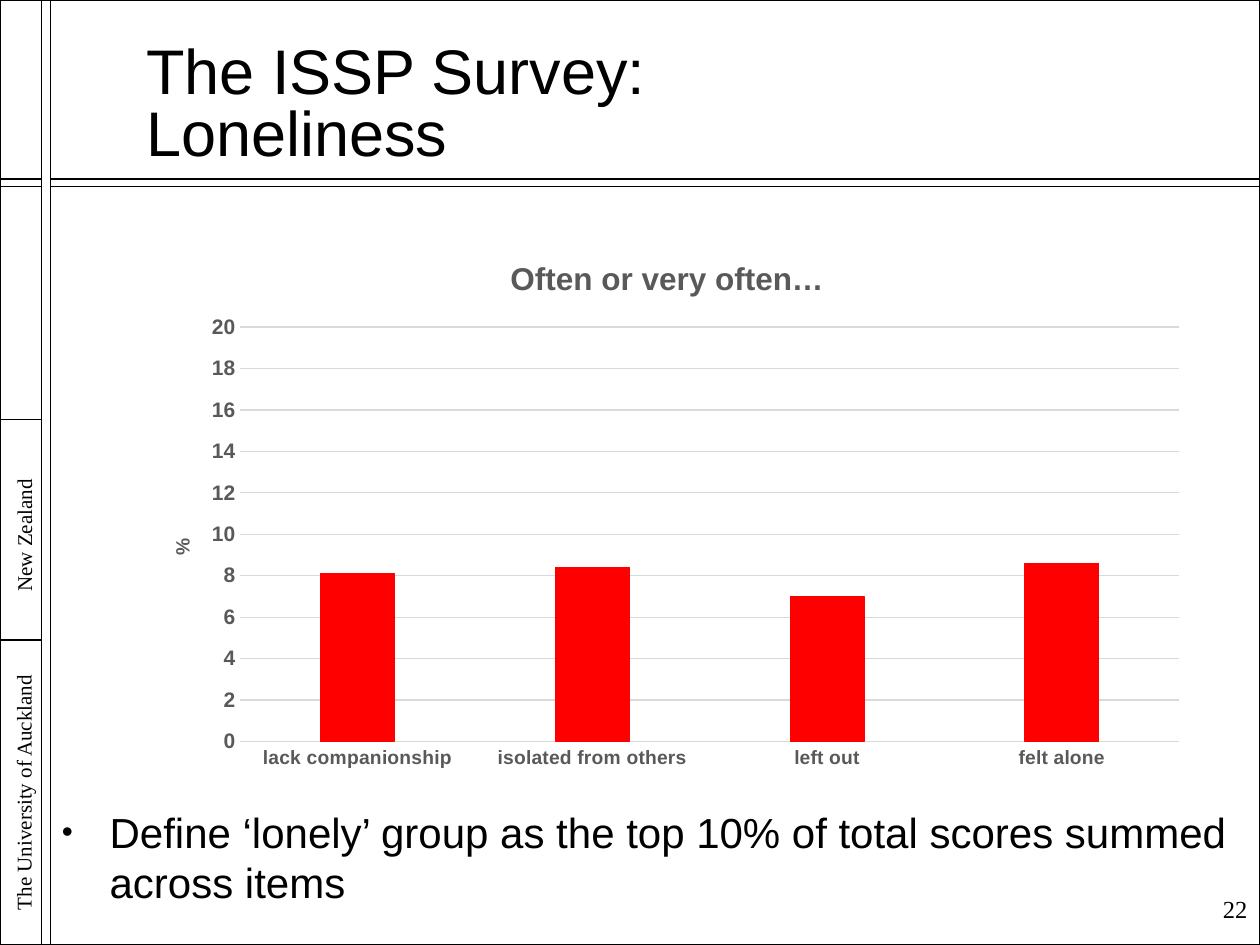
from typing import NamedTuple

from lxml.etree import SubElement
from pptx import Presentation
from pptx.chart.data import CategoryChartData
from pptx.dml.color import RGBColor
from pptx.enum.chart import XL_CHART_TYPE as ChartType, XL_TICK_MARK as TickMark
from pptx.enum.shapes import MSO_CONNECTOR, MSO_SHAPE
from pptx.enum.text import MSO_ANCHOR as Anchor, MSO_AUTO_SIZE as AutoSize, PP_ALIGN as Align
from pptx.oxml.ns import qn
from pptx.util import Inches, Pt

WIDTH, HEIGHT = 10, 7.5
RAIL_LEFT, RAIL_RIGHT = 0.33, 0.4
HEADER_TOP, HEADER_BOTTOM = 1.42, 1.48
BLACK, GREY, PALE, RED = "000000", "595959", "D9D9D9", "FF0000"
SANS, SERIF = "Arial", "Times New Roman"


class Box(NamedTuple):
    left: float
    top: float
    width: float
    height: float


class Rule(NamedTuple):
    start: tuple[float, float]
    end: tuple[float, float]
    weight: float = 0.75


class RailLabel(NamedTuple):
    wording: str
    box: Box


RULES = [
    *(Rule((x, 0), (x, HEIGHT)) for x in (RAIL_LEFT, RAIL_RIGHT)),
    *(Rule((RAIL_RIGHT, y), (WIDTH, y)) for y in (HEADER_TOP, HEADER_BOTTOM)),
    *(Rule((0, y), (RAIL_LEFT, y), 1) for y in (HEADER_TOP, HEADER_BOTTOM, 3.33, 5.08)),
]
RAIL_LABELS = [
    RailLabel("The University of Auckland", Box(-0.92, 6.12, 2.25, 0.34)),
    RailLabel("New Zealand", Box(-0.53, 4.07, 1.5, 0.36)),
]
SHARES = {
    "lack companionship": 8.1,
    "isolated from others": 8.4,
    "left out": 7,
    "felt alone": 8.6,
}


def color(code: str) -> RGBColor:
    return RGBColor.from_string(code)


def inches(box: Box) -> list[int]:
    return [Inches(length) for length in box]


def style_font(font, size: float, code: str = BLACK, name: str = SANS, bold: bool = False) -> None:
    font.size, font.name, font.bold = Pt(size), name, bold
    font.color.rgb = color(code)


def style_line(line, code: str, weight: float = 0.75) -> None:
    line.color.rgb = color(code)
    line.width = Pt(weight)


def write(shape, wording: str, *, size: float, name: str = SANS, align=Align.LEFT,
          anchor=Anchor.TOP, spacing: float = 1, bullet: str = "") -> None:
    frame = shape.text_frame
    frame.word_wrap, frame.auto_size = True, AutoSize.NONE
    frame.vertical_anchor = anchor
    frame.text = wording
    paragraph = frame.paragraphs[0]
    paragraph.alignment, paragraph.line_spacing = align, spacing
    paragraph.space_before = Pt(0)
    if bullet:
        props = paragraph._p.get_or_add_pPr()
        props.set("marL", str(Inches(0.38)))
        props.set("indent", str(Inches(-0.38)))
        SubElement(props, qn("a:buSzPct"), val="75000")
        SubElement(props, qn("a:buFont"), typeface=SANS)
        SubElement(props, qn("a:buChar"), char=bullet)
    for run in paragraph.runs:
        style_font(run.font, size, name=name)


def place(shape, box: Box):
    shape.left, shape.top, shape.width, shape.height = inches(box)
    return shape


def draw_rule(slide, rule: Rule) -> None:
    ends = [Inches(length) for length in (*rule.start, *rule.end)]
    connector = slide.shapes.add_connector(MSO_CONNECTOR.STRAIGHT, *ends)
    style_line(connector.line, BLACK, rule.weight)
    SubElement(connector._element.spPr, qn("a:effectLst"))


def draw_frame(slide) -> None:
    border = slide.shapes.add_shape(MSO_SHAPE.RECTANGLE, *inches(Box(0, 0, WIDTH, HEIGHT)))
    border.shadow.inherit = False
    border.fill.background()
    style_line(border.line, BLACK)
    for rule in RULES:
        draw_rule(slide, rule)
    for label in RAIL_LABELS:
        holder = slide.shapes.add_textbox(*inches(label.box))
        holder.rotation = 270
        write(holder, label.wording, size=12, name=SERIF, align=Align.CENTER)


def fix_layout(element, target: str = "", **shares: float) -> None:
    """Place a chart part at shares of the chart's width and height."""
    layout = element.find(qn("c:layout"))
    if layout is None:
        layout = element.get_or_add_layout()
    manual = SubElement(layout, qn("c:manualLayout"))
    if target:
        SubElement(manual, qn("c:layoutTarget"), val=target)
    for side in "xy":
        SubElement(manual, qn(f"c:{side}Mode"), val="edge")
    for side, share in shares.items():
        SubElement(manual, qn(f"c:{side}"), val=str(share))


def title_chart_part(part, wording: str, size: float):
    title = part.chart_title if hasattr(part, "chart_title") else part.axis_title
    title.text_frame.text = wording
    style_font(title.text_frame.paragraphs[0].runs[0].font, size, GREY, bold=True)
    return title


def draw_chart(slide, box: Box, heading: str) -> None:
    data = CategoryChartData()
    data.categories = list(SHARES)
    data.add_series(heading, list(SHARES.values()))
    chart = slide.shapes.add_chart(ChartType.COLUMN_CLUSTERED, *inches(box), data).chart
    style_font(chart.font, 10)
    chart.has_legend = False
    title_chart_part(chart, heading, 18)

    plot = chart.plots[0]
    plot.gap_width, plot.overlap, plot.vary_by_categories = 219, -27, False
    bars = plot.series[0].format
    bars.fill.solid()
    bars.fill.fore_color.rgb = color(RED)
    style_line(bars.line, RED)

    items, percent = chart.category_axis, chart.value_axis
    for axis, size in ((items, 11), (percent, 12)):
        axis.major_tick_mark = axis.minor_tick_mark = TickMark.NONE
        style_font(axis.tick_labels.font, size, GREY, bold=True)
    style_line(items.format.line, PALE)
    percent.format.line.fill.background()
    percent.minimum_scale, percent.maximum_scale, percent.major_unit = 0, 20, 2
    style_line(percent.major_gridlines.format.line, PALE)
    unit = title_chart_part(percent, "%", 11)
    fix_layout(unit._element, x=0.03, y=0.55)
    plot_area = chart._chartSpace.chart.plotArea
    if plot_area.find(qn("c:layout")) is None:
        plot_area.insert(0, plot_area.makeelement(qn("c:layout")))
    fix_layout(plot_area, "inner", x=0.1, y=0.17, w=0.88, h=0.76)


def main() -> None:
    deck = Presentation()
    deck.slide_width, deck.slide_height = Inches(WIDTH), Inches(HEIGHT)
    slide = deck.slides.add_slide(deck.slide_layouts[1])
    draw_frame(slide)
    title, body = slide.placeholders
    write(place(title, Box(1.06, 0.36, 5.52, 0.98)), "The ISSP Survey:\vLoneliness",
          size=36, anchor=Anchor.MIDDLE, spacing=0.82)
    draw_chart(slide, Box(1.06, 1.86, 8.47, 4.33), "Often or very often…")
    write(place(body, Box(0.39, 6.35, 9.61, 0.91)),
          "Define ‘lonely’ group as the top 10% of total scores summed across items",
          size=24, bullet="•")
    page_number = slide.shapes.add_textbox(*inches(Box(9.53, 6.96, 0.47, 0.5)))
    write(page_number, "22", size=14, name=SERIF, align=Align.RIGHT, anchor=Anchor.MIDDLE)
    deck.save("out.pptx")


if __name__ == "__main__":
    main()
